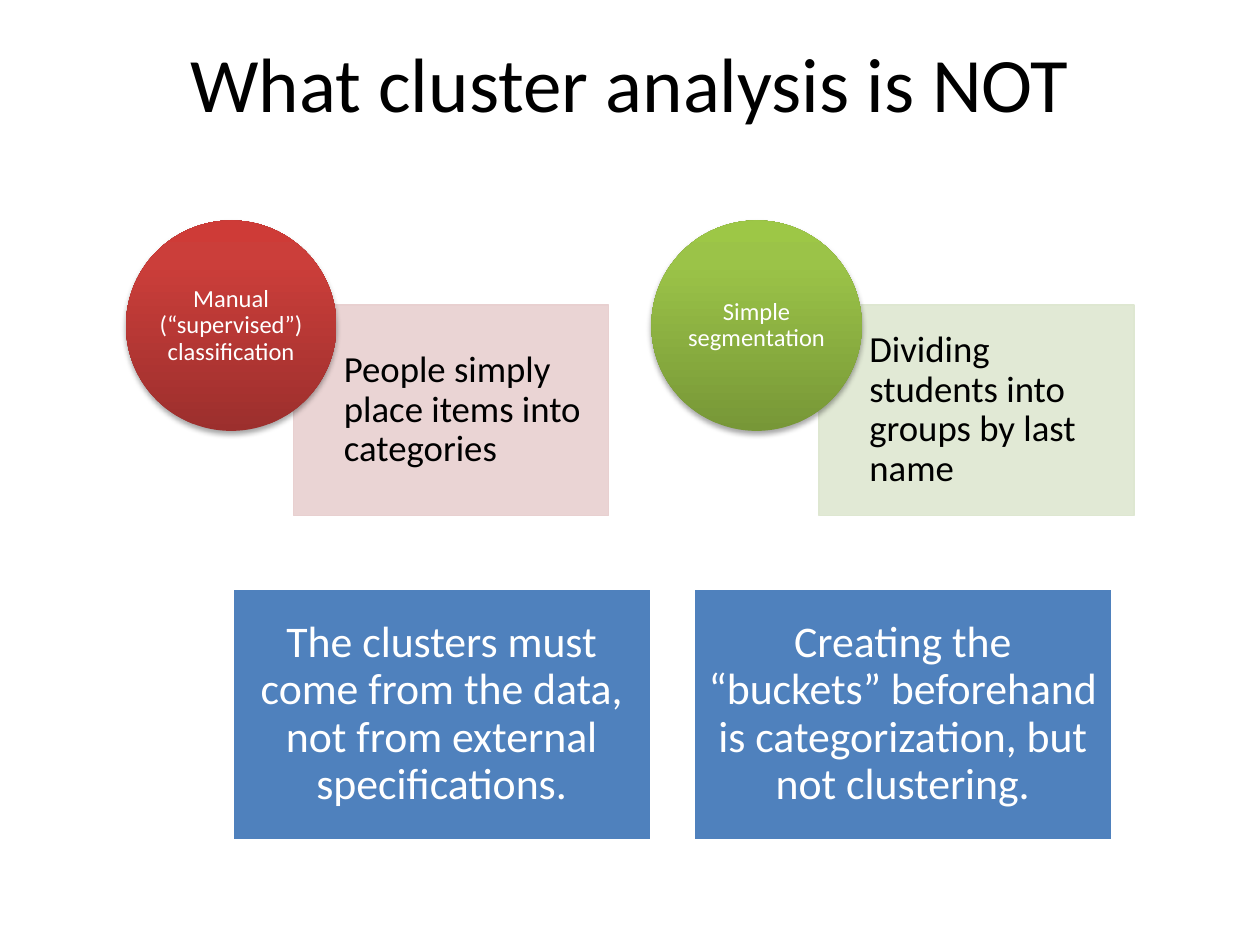
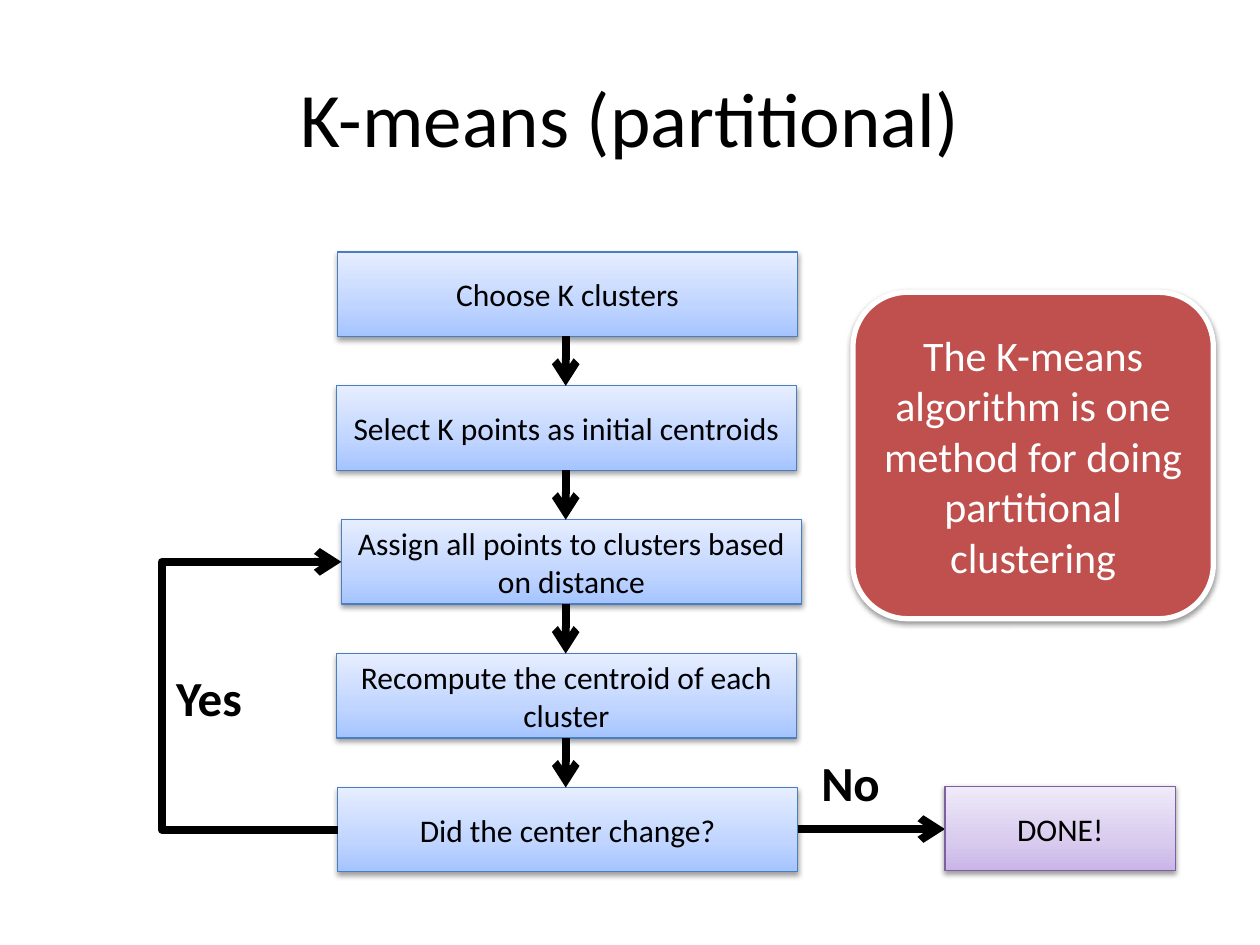
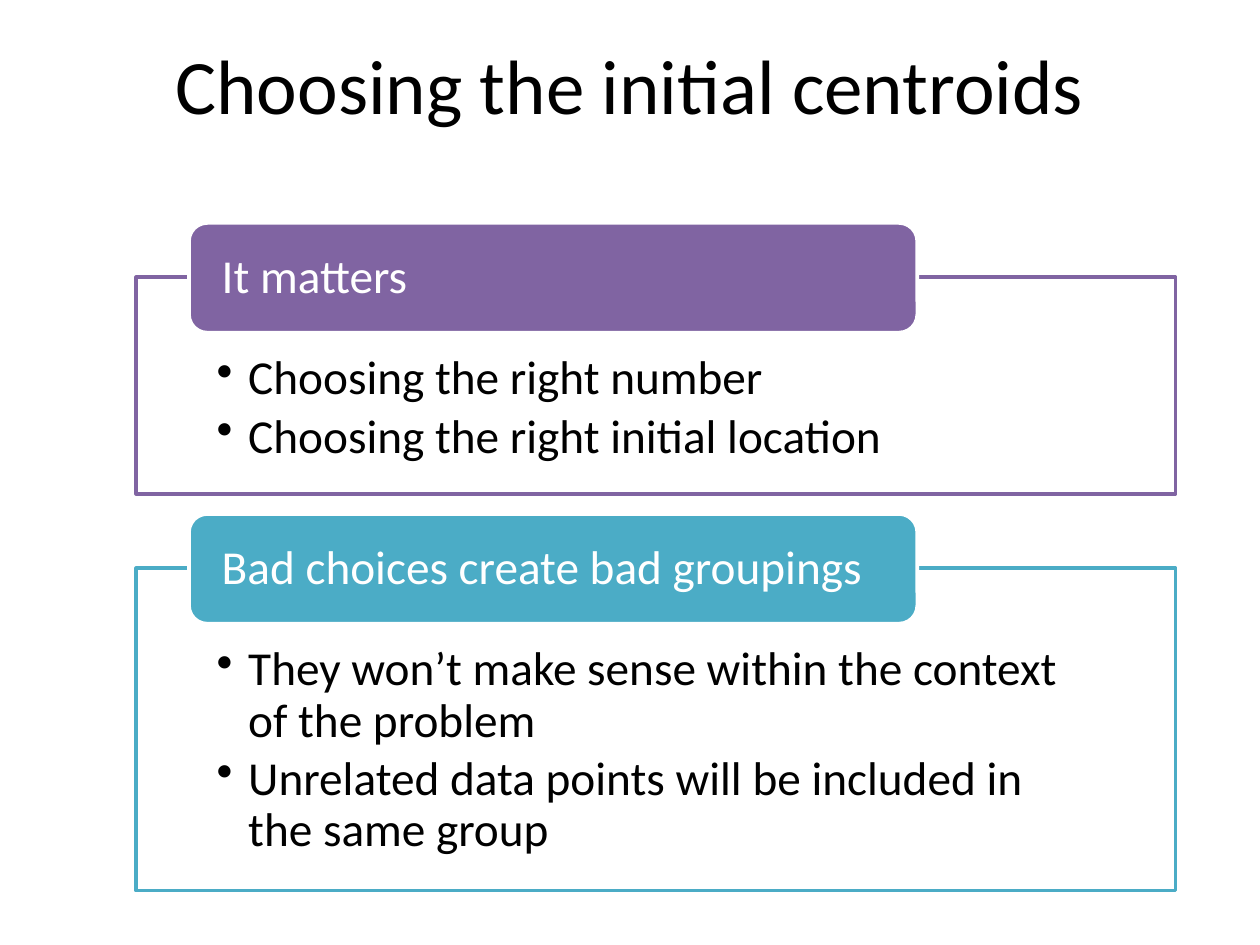
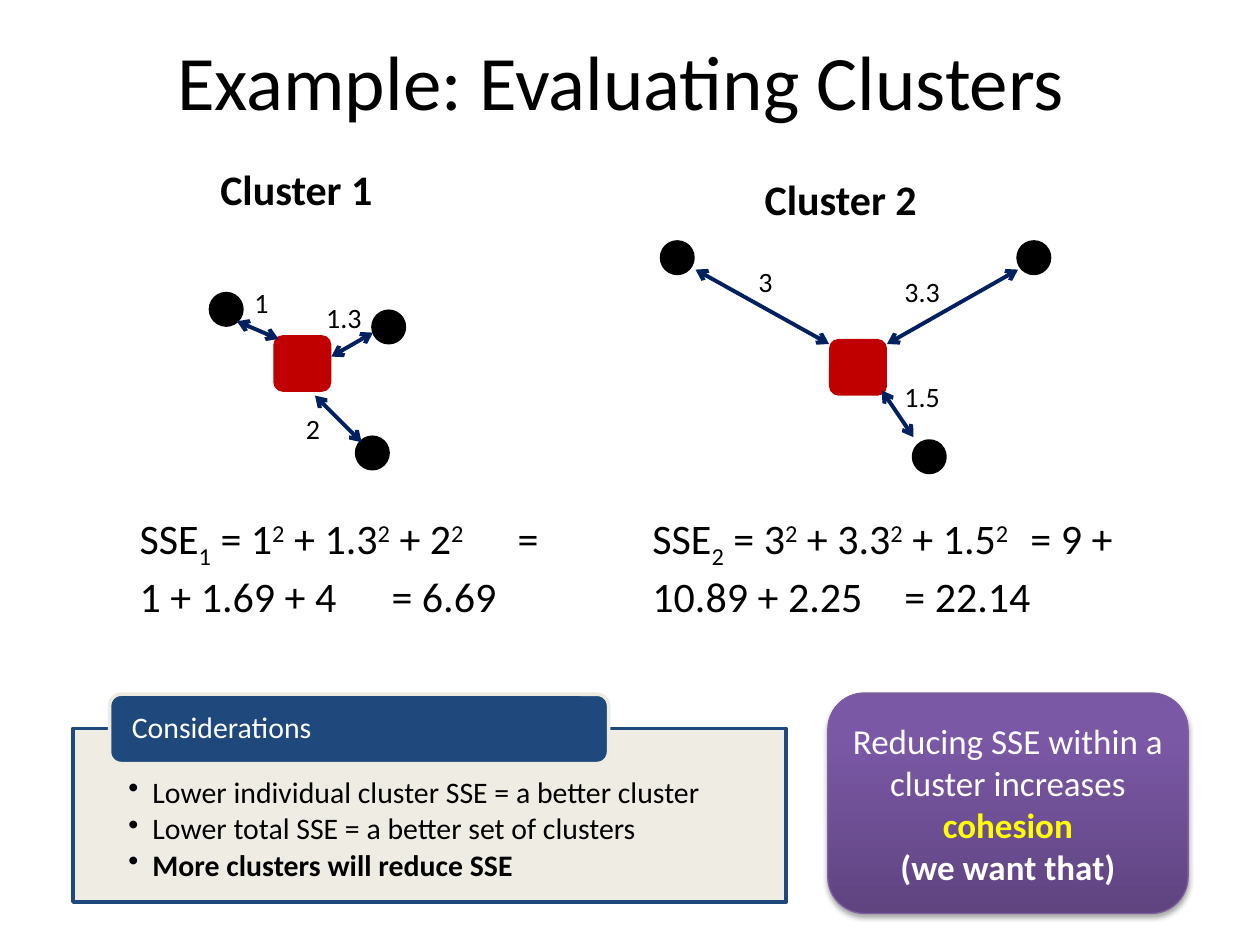
"""Build four slides about cluster analysis and K-means."""
from lxml import etree
from pptx import Presentation, util as u
from pptx.dml.color import RGBColor
from pptx.enum import shapes, text
from pptx.oxml.ns import qn

FONT = "Calibri"
BLACK, WHITE, NAVY = "000000", "FFFFFF", "002060"
RECT, ROUND, OVAL = (shapes.MSO_SHAPE.RECTANGLE, shapes.MSO_SHAPE.ROUNDED_RECTANGLE,
                     shapes.MSO_SHAPE.OVAL)
LEFT, CENTER = text.PP_ALIGN.LEFT, text.PP_ALIGN.CENTER
TOP, MIDDLE = text.MSO_ANCHOR.TOP, text.MSO_ANCHOR.MIDDLE
INSETS = (0.1, 0.05, 0.1, 0.05)

RED_GLOSS = [(0, "9C2F2D"), (80, "CB3E3A"), (100, "CE3B37")]
GREEN_GLOSS = [(0, "779737"), (80, "9BC348"), (100, "9DC746")]
PURPLE_GLOSS = [(0, "5F4480"), (80, "7B58A6"), (100, "7C57A8")]
BLUE_TINT = [(0, "A4C4FF"), (35, "BFD4FF"), (100, "E6EEFF")]
PURPLE_TINT = [(0, "C9B5E8"), (35, "D8CBEE"), (100, "F0EAF9")]
GLOSS_SHADOW, TINT_SHADOW = (35, 1.8), (38, 1.6)

EXAMPLES = [
    (1, "Manual (“supervised”) classification", RED_GLOSS,
     "People simply place items into categories", "E8D0D0"),
    (5.17, "Simple segmentation", GREEN_GLOSS,
     "Dividing students into groups by last name", "DEE7D1"),
]
REASONS = [
    (1.84, "The clusters must come from the data, not from external specifications."),
    (5.5, "Creating the “buckets” beforehand is categorization, but not clustering."),
]

STEPS = [
    (2.68, "Choose K clusters"),
    (2.67, "Select K points as initial centroids"),
    (2.71, "Assign all points to clusters based on distance"),
    (2.67, "Recompute the centroid of each cluster"),
    (2.68, "Did the center change?"),
]
ANSWERS = [("Yes", (1.3, 5.25, 0.88, 0.57)), ("No", (6.42, 5.92, 0.73, 0.57))]

CENTROID_PANELS = [
    (2.2, 1.72, "8064A2", "It matters",
     ["Choosing the right number", "Choosing the right initial location"]),
    (4.51, 2.56, "4BACC6", "Bad choices create bad groupings",
     ["They won’t make sense within the context of the problem",
      "Unrelated data points will be included in the same group"]),
]

CLUSTERS = [
    {"name": ("Cluster 1", 1.65, 1.25),
     "centroid": (2.17, 2.66),
     "points": [(1.67, 2.33), (2.83, 3.47), (2.96, 2.47)],
     "arrows": [(2.21, 2.69, 1.88, 2.55), (2.96, 2.64, 2.63, 2.83), (2.87, 3.51, 2.5, 3.14)],
     "distances": [("1", 1.92, 2.22), ("1.3", 2.49, 2.34), ("2", 2.33, 3.22)],
     "sse": ("1", " \t= 1 + 1.69 + 4 \t= 6.69", 1.01, 3.47)},
    {"name": ("Cluster 2", 5.97, 1.33),
     "centroid": (6.58, 2.69),
     "points": [(5.25, 1.92), (7.25, 3.5), (8.08, 1.92)],
     "arrows": [(6.58, 2.73, 5.52, 2.14), (7.04, 2.73, 8.08, 2.14), (7, 3.1, 7.25, 3.47)],
     "distances": [("3", 5.92, 2.05), ("3.3", 7.08, 2.13), ("1.5", 7.08, 2.96)],
     "sse": ("2", " \t= 9 + 10.89 + 2.25 \t= 22.14", 5.08, 4)},
]
CONSIDERATIONS = ["Lower individual cluster SSE = a better cluster",
                  "Lower total SSE = a better set of clusters",
                  [("More clusters will reduce SSE", {"bold": True})]]
COHESION = [[("Reducing SSE within a cluster increases ", {}),
             ("cohesion", {"color": "FFFF00", "bold": True})],
            [("(we want that)", {"bold": True})]]


def rgb(value):
    return RGBColor.from_string(value)


def child(parent, tag, **attrs):
    return etree.SubElement(parent, qn(tag), {k: str(v) for k, v in attrs.items()})


def write(sp, paras, size, color=BLACK, bold=False, align=LEFT, anchor=TOP,
          insets=INSETS, spacing=1, bullet=0):
    tf = sp.text_frame
    sides = ("margin_left", "margin_top", "margin_right", "margin_bottom")
    frame = dict(zip(sides, map(u.Inches, insets)), word_wrap=True, vertical_anchor=anchor)
    for name, value in frame.items():
        setattr(tf, name, value)
    for i, runs in enumerate(paras):
        p = tf.paragraphs[0] if i == 0 else tf.add_paragraph()
        p.alignment, p.line_spacing = align, spacing
        if bullet:
            p.space_after = u.Pt(round(size * 0.15, 1))
            pPr = p._p.get_or_add_pPr()
            pPr.set("marL", str(u.Inches(bullet)))
            pPr.set("indent", str(-u.Inches(bullet)))
            child(pPr, "a:buChar", char="•")
        for words, extra in [(runs, {})] if isinstance(runs, str) else runs:
            fmt = {"name": FONT, "size": u.Pt(size), "bold": bold, "color": color, **extra}
            r = p.add_run()
            r.text = words
            r.font.color.rgb = rgb(fmt.pop("color"))
            if "baseline" in fmt:
                r.font._element.set("baseline", str(fmt.pop("baseline") * 1000))
            for name, value in fmt.items():
                setattr(r.font, name, value)


def label(s, at, words, size, **style):
    write(s.shapes.add_textbox(*map(u.Inches, at)), [words], size, **style)


def box(s, kind, at, fill, line=None, width=2, alpha=100, shadow=None):
    sp = s.shapes.add_shape(kind, *map(u.Inches, at))
    sp.shadow.inherit = False
    spPr = sp._element.spPr
    if isinstance(fill, str):
        sp.fill.solid()
        sp.fill.fore_color.rgb = rgb(fill)
        if alpha < 100:
            child(spPr.find(".//" + qn("a:srgbClr")), "a:alpha", val=alpha * 1000)
    else:
        sp.fill.gradient()
        sp.fill.gradient_angle = 90
        stops = spPr.find(".//" + qn("a:gsLst"))
        for stop in list(stops):
            stops.remove(stop)
        for pos, color in fill:
            child(child(stops, "a:gs", pos=pos * 1000), "a:srgbClr", val=color)
    if line:
        sp.line.color.rgb = rgb(line)
        sp.line.width = u.Pt(width)
    else:
        sp.line.fill.background()
    if shadow:
        opacity, distance = shadow
        outer = child(spPr.find(qn("a:effectLst")), "a:outerShdw", blurRad=u.Pt(3.1),
                      dist=u.Pt(distance), dir=5400000, rotWithShape=0)
        child(child(outer, "a:srgbClr", val=BLACK), "a:alpha", val=opacity * 1000)
    return sp


def arrow(s, ends, color=BLACK, width=4.5, both=False, kind=shapes.MSO_CONNECTOR.STRAIGHT):
    cx = s.shapes.add_connector(kind, *map(u.Inches, ends))
    cx.line.color.rgb = rgb(color)
    cx.line.width = u.Pt(width)
    ln = cx.line._get_or_add_ln()
    for tag in ("a:headEnd", "a:tailEnd") if both else ("a:tailEnd",):
        child(ln, tag, type="arrow")
    child(cx._element.spPr, "a:effectLst")
    return cx


def panel(s, frame, tab, color, heading, bullets, size, insets, indent,
          fill=WHITE, tab_line=WHITE):
    body = box(s, RECT, frame, fill, color, alpha=90)
    write(body, bullets, size, insets=insets, spacing=0.9, bullet=indent)
    head = box(s, ROUND, tab, color, tab_line)
    side = insets[0] * 0.34
    write(head, [heading], size, color=WHITE, anchor=MIDDLE,
          insets=(side, 0, side, 0), spacing=0.9)


def new_slide(prs, title, top, left=0.5):
    s = prs.slides.add_slide(prs.slide_layouts[6])
    label(s, (left, top, 9, 1.25), title, 44, align=CENTER, anchor=MIDDLE)
    return s


def not_clustering(prs):
    s = new_slide(prs, "What cluster analysis is NOT", 0.02)
    for x, name, gloss, example, tint in EXAMPLES:
        card = box(s, RECT, (x + 1.33, 2.42, 2.5, 1.67), tint, tint, 0.75, alpha=90)
        write(card, [example], 21, anchor=MIDDLE, insets=(0.4, 0.16, 0.16, 0.16), spacing=0.9)
        disc = box(s, OVAL, (x, 1.75, 1.67, 1.67), gloss, shadow=GLOSS_SHADOW)
        write(disc, [name], 14, WHITE, align=CENTER, anchor=MIDDLE, insets=(0,) * 4, spacing=0.9)
    for x, reason in REASONS:
        card = box(s, RECT, (x, 4.67, 3.33, 2), "4F81BD", WHITE)
        write(card, [reason], 25, WHITE, align=CENTER, anchor=MIDDLE,
              insets=(0.1,) * 4, spacing=0.9)


def k_means(prs):
    s = new_slide(prs, "K-means (partitional)", 0.3)
    first, last, w, h, loop_x = 2, 6.25, 3.65, 0.67, 1.28
    pitch = (last - first) / (len(STEPS) - 1)
    boxes = []
    for i, (x, step) in enumerate(STEPS):
        y = first + i * pitch
        sp = box(s, RECT, (x, y, w, h), BLUE_TINT, "4B7EBC", 0.75, shadow=TINT_SHADOW)
        write(sp, [step], 18, align=CENTER, anchor=MIDDLE)
        boxes.append(sp)
        if i:
            arrow(s, (4.49, y - pitch + h, 4.49, y))
    assign, question = boxes[2], boxes[-1]
    loop = arrow(s, (2.68, 6.58, 2.71, 4.46), kind=shapes.MSO_CONNECTOR.ELBOW)
    loop.begin_connect(question, 1)
    loop.end_connect(assign, 1)
    bend = (u.Inches(loop_x) - loop.begin_x) / loop.width
    guides = loop._element.spPr.find(".//" + qn("a:avLst"))
    child(guides, "a:gd", name="adj1", fmla=f"val {round(bend * 100000)}")
    arrow(s, (6.33, 6.58, 7.5, 6.58))
    done = box(s, RECT, (7.5, 6.24, 1.83, h), PURPLE_TINT, "7D60A0", 0.75, shadow=TINT_SHADOW)
    write(done, ["DONE!"], 18, align=CENTER, anchor=MIDDLE)
    for answer, at in ANSWERS:
        label(s, at, answer, 28, bold=True)
    note = box(s, ROUND, (6.77, 2.32, 2.86, 2.59), "C0504D", WHITE, 3, shadow=TINT_SHADOW)
    write(note, ["The K-means algorithm is one method for doing partitional clustering"], 24,
          WHITE, align=CENTER, anchor=MIDDLE)


def initial_centroids(prs):
    s = new_slide(prs, "Choosing the initial centroids", 0.04)
    for y, h, color, heading, bullets in CENTROID_PANELS:
        panel(s, (1.08, y, 8.25, h), (1.5, y - 0.43, 5.78, 0.87), color, heading, bullets,
              27, (0.64, 0.61, 0.64, 0.21), 0.25)


def evaluating(prs):
    s = new_slide(prs, "Example: Evaluating Clusters", 0.01, left=0.43)
    for cluster in CLUSTERS:
        for x, y in cluster["points"]:
            box(s, OVAL, (x, y, 0.25, 0.25), BLACK, BLACK)
        box(s, ROUND, (*cluster["centroid"], 0.46, 0.45), "C00000")
        for ends in cluster["arrows"]:
            arrow(s, ends, NAVY, 2.25, both=True)
        name, x, y = cluster["name"]
        label(s, (x, y, 1.7, 0.5), name, 24, bold=True)
        index, result, sse_x, sse_w = cluster["sse"]
        formula = [("SSE", {}), (index, {"baseline": -25})]
        for i, (distance, x, y) in enumerate(cluster["distances"]):
            label(s, (x, y, 0.33 if len(distance) == 1 else 0.51, 0.37), distance, 16)
            formula += [((" + " if i else " = ") + distance, {}), ("2", {"baseline": 30})]
        label(s, (sse_x, 4.02, sse_w, 1.31), formula + [(result, {})], 24)
    panel(s, (0.58, 5.78, 5.66, 1.38), (0.87, 5.51, 3.96, 0.55), "1F497D", "Considerations",
          CONSIDERATIONS, 17, (0.44, 0.39, 0.44, 0.13), 0.19, fill="EEECE1", tab_line="EEECE1")
    note = box(s, ROUND, (6.57, 5.5, 2.86, 1.75), PURPLE_GLOSS, "7D60A0", 0.75,
               shadow=GLOSS_SHADOW)
    write(note, COHESION, 20, WHITE, align=CENTER, anchor=MIDDLE)


def main():
    prs = Presentation()
    prs.slide_width, prs.slide_height = u.Inches(10), u.Inches(7.5)
    for build in (not_clustering, k_means, initial_centroids, evaluating):
        build(prs)
    prs.save("out.pptx")


if __name__ == "__main__":
    main()
